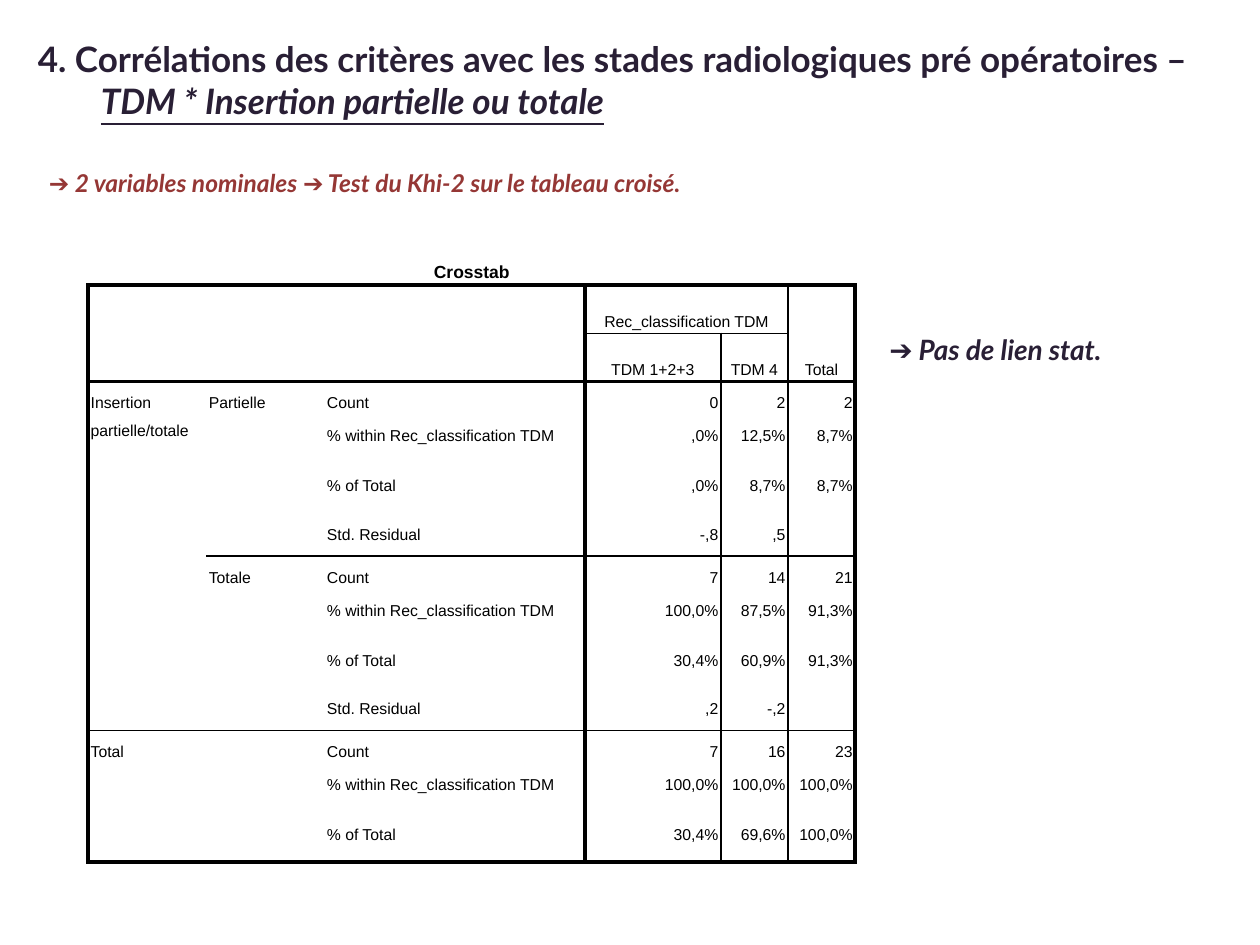
import pptx
import pptx.dml.color
import pptx.enum.text
import pptx.oxml.ns
import pptx.util
from lxml import etree

Pt = pptx.util.Pt
ALIGN = pptx.enum.text.PP_ALIGN
ANCHOR = pptx.enum.text.MSO_ANCHOR
FIT = pptx.enum.text.MSO_AUTO_SIZE.SHAPE_TO_FIT_TEXT

PLUM = pptx.dml.color.RGBColor(0x29, 0x1F, 0x35)
BRICK = pptx.dml.color.RGBColor(0x95, 0x37, 0x35)
BLACK = pptx.dml.color.RGBColor(0, 0, 0)
WHITE = pptx.dml.color.RGBColor(255, 255, 255)

THICK, THIN = 2.25, 1
COLUMN_WIDTHS = [67.5, 67.5, 148.8, 77.7, 38.4, 38.4]
HEADER_HEIGHTS = [18, 27.6, 27.6]
BLOCK_HEIGHTS = [18, 28.8, 27.6, 18]
ROW_HEIGHTS = HEADER_HEIGHTS + BLOCK_HEIGHTS * 2 + BLOCK_HEIGHTS[:3]
MERGES = [
    (0, 0, 0, 5), (1, 3, 1, 4), (1, 5, 2, 5), (3, 0, 10, 0),
    (3, 1, 6, 1), (7, 1, 10, 1), (11, 0, 13, 1),
]
HEADINGS = {
    (0, 0): "Crosstab",
    (1, 3): "Rec_classification TDM",
    (1, 5): "Total",
    (2, 3): "TDM 1+2+3",
    (2, 4): "TDM 4",
}
GROUPS = {
    (3, 0): "Insertion partielle/totale",
    (3, 1): "Partielle",
    (7, 1): "Totale",
    (11, 0): "Total",
}
STATISTICS = [
    ("Count", "0", "2", "2"),
    ("% within Rec_classification TDM", ",0%", "12,5%", "8,7%"),
    ("% of Total", ",0%", "8,7%", "8,7%"),
    ("Std. Residual", "-,8", ",5", ""),
    ("Count", "7", "14", "21"),
    ("% within Rec_classification TDM", "100,0%", "87,5%", "91,3%"),
    ("% of Total", "30,4%", "60,9%", "91,3%"),
    ("Std. Residual", ",2", "-,2", ""),
    ("Count", "7", "16", "23"),
    ("% within Rec_classification TDM", "100,0%", "100,0%", "100,0%"),
    ("% of Total", "30,4%", "69,6%", "100,0%"),
]
ROW_RULES = {1: (THICK, 0), 2: (THIN, 3), 3: (THICK, 0),
             7: (THIN, 1), 11: (THIN, 0), 14: (THICK, 0)}
COLUMN_RULES = {0: (THICK, 1), 3: (THICK, 1), 4: (THIN, 2),
                5: (THIN, 1), 6: (THICK, 1)}


def apply_format(target, values):
    for attribute, value in values.items():
        setattr(target, attribute, value)


def rule_weight(rules, position, crossing):
    weight, start = rules.get(position, (0, 0))
    return weight if crossing >= start else 0


class CrosstabSlide:
    lettering = {"name": "Lato", "bold": True}
    cell_lettering = {"name": "Arial", "size": Pt(9), "bold": False}
    cell_layout = {side: Pt(1.44) for side in
                   ("margin_left", "margin_right", "margin_top", "margin_bottom")}

    def __init__(self, deck):
        self.slide = deck.slides.add_slide(deck.slide_layouts[5])

    def add_words(self, paragraph, text, color, **formats):
        run = paragraph.add_run()
        run.text = text
        apply_format(run.font, formats)
        run.font.color.rgb = color

    def title(self, opening, subject, left, top, width, height):
        heading = self.slide.shapes.title
        apply_format(heading, {"left": Pt(left), "top": Pt(top),
                               "width": Pt(width), "height": Pt(height)})
        apply_format(heading.text_frame, {"vertical_anchor": ANCHOR.TOP,
                                          "word_wrap": True, "auto_size": FIT})
        line = heading.text_frame.paragraphs[0]
        line.alignment = ALIGN.LEFT
        indents = line._p.get_or_add_pPr()
        indents.set("marL", str(Pt(36)))
        indents.set("indent", str(-Pt(36)))
        self.add_words(line, opening, PLUM, size=Pt(20), **self.lettering)
        self.add_words(line, subject, PLUM, size=Pt(20), italic=True,
                       underline=True, **self.lettering)

    def remark(self, text, left, top, width, height, size, color, wrap=True):
        note = self.slide.shapes.add_textbox(Pt(left), Pt(top), Pt(width), Pt(height))
        apply_format(note.text_frame, {"word_wrap": wrap, "auto_size": FIT})
        self.add_words(note.text_frame.paragraphs[0], text, color,
                       size=Pt(size), italic=True, **self.lettering)

    def border(self, cell, side, weight):
        properties = cell._tc.get_or_add_tcPr()
        edge = etree.SubElement(properties, pptx.oxml.ns.qn("a:ln" + side),
                                w=str(Pt(weight)))
        if weight:
            fill = etree.SubElement(edge, pptx.oxml.ns.qn("a:solidFill"))
            etree.SubElement(fill, pptx.oxml.ns.qn("a:srgbClr"), val=str(BLACK))
        else:
            etree.SubElement(edge, pptx.oxml.ns.qn("a:noFill"))

    def cell(self, cell, row, column, text, alignment, anchor, **formats):
        below = row + (cell.span_height if cell.is_merge_origin else 1)
        beyond = column + (cell.span_width if cell.is_merge_origin else 1)
        self.border(cell, "L", rule_weight(COLUMN_RULES, column, row))
        self.border(cell, "R", rule_weight(COLUMN_RULES, beyond, row))
        self.border(cell, "T", rule_weight(ROW_RULES, row, column))
        self.border(cell, "B", rule_weight(ROW_RULES, below, column))
        cell.fill.solid()
        cell.fill.fore_color.rgb = WHITE
        apply_format(cell, {**self.cell_layout, "vertical_anchor": anchor})
        line = cell.text_frame.paragraphs[0]
        apply_format(line, {"alignment": alignment, "line_spacing": Pt(16)})
        if text:
            self.add_words(line, text, BLACK, **{**self.cell_lettering, **formats})

    def crosstab(self, left, top):
        frame = self.slide.shapes.add_table(
            len(ROW_HEIGHTS), len(COLUMN_WIDTHS), Pt(left), Pt(top),
            Pt(sum(COLUMN_WIDTHS)), Pt(sum(ROW_HEIGHTS)))
        grid = frame.table
        apply_format(grid, {"first_row": False, "horz_banding": False})
        for column, width in zip(grid.columns, COLUMN_WIDTHS):
            column.width = Pt(width)
        for row, height in zip(grid.rows, ROW_HEIGHTS):
            row.height = Pt(height)
        for first_row, first_column, last_row, last_column in MERGES:
            grid.cell(first_row, first_column).merge(grid.cell(last_row, last_column))

        header_count = len(HEADER_HEIGHTS)
        for row in range(len(ROW_HEIGHTS)):
            for column in range(len(COLUMN_WIDTHS)):
                place = (row, column)
                formats = {}
                if row < header_count:
                    text, alignment, anchor = HEADINGS.get(place), ALIGN.CENTER, ANCHOR.BOTTOM
                    if row == 0:
                        anchor = ANCHOR.MIDDLE
                        formats = {"size": Pt(10), "bold": True}
                elif column < 2:
                    text, alignment, anchor = GROUPS.get(place), ALIGN.LEFT, ANCHOR.TOP
                else:
                    text = STATISTICS[row - header_count][column - 2]
                    alignment = ALIGN.LEFT if column == 2 else ALIGN.RIGHT
                    anchor = ANCHOR.TOP
                self.cell(grid.cell(row, column), row, column, text,
                          alignment, anchor, **formats)


def main():
    deck = pptx.Presentation()
    apply_format(deck, {"slide_width": Pt(720), "slide_height": Pt(540)})
    page = CrosstabSlide(deck)
    page.title("4. Corrélations des critères avec les stades radiologiques pré opératoires – ",
               "TDM * Insertion partielle ou totale", 14.4, 18, 676.8, 80)
    page.remark("➔ 2 variables nominales ➔ Test du Khi-2 sur le tableau croisé.",
                20.9, 92.2, 635.8, 24.5, 14, BRICK)
    page.crosstab(50.4, 144)
    page.remark("➔ Pas de lien stat.", 501.1, 186.5, 170.6, 26.6, 16, PLUM, wrap=False)
    deck.save("out.pptx")


if __name__ == "__main__":
    main()
